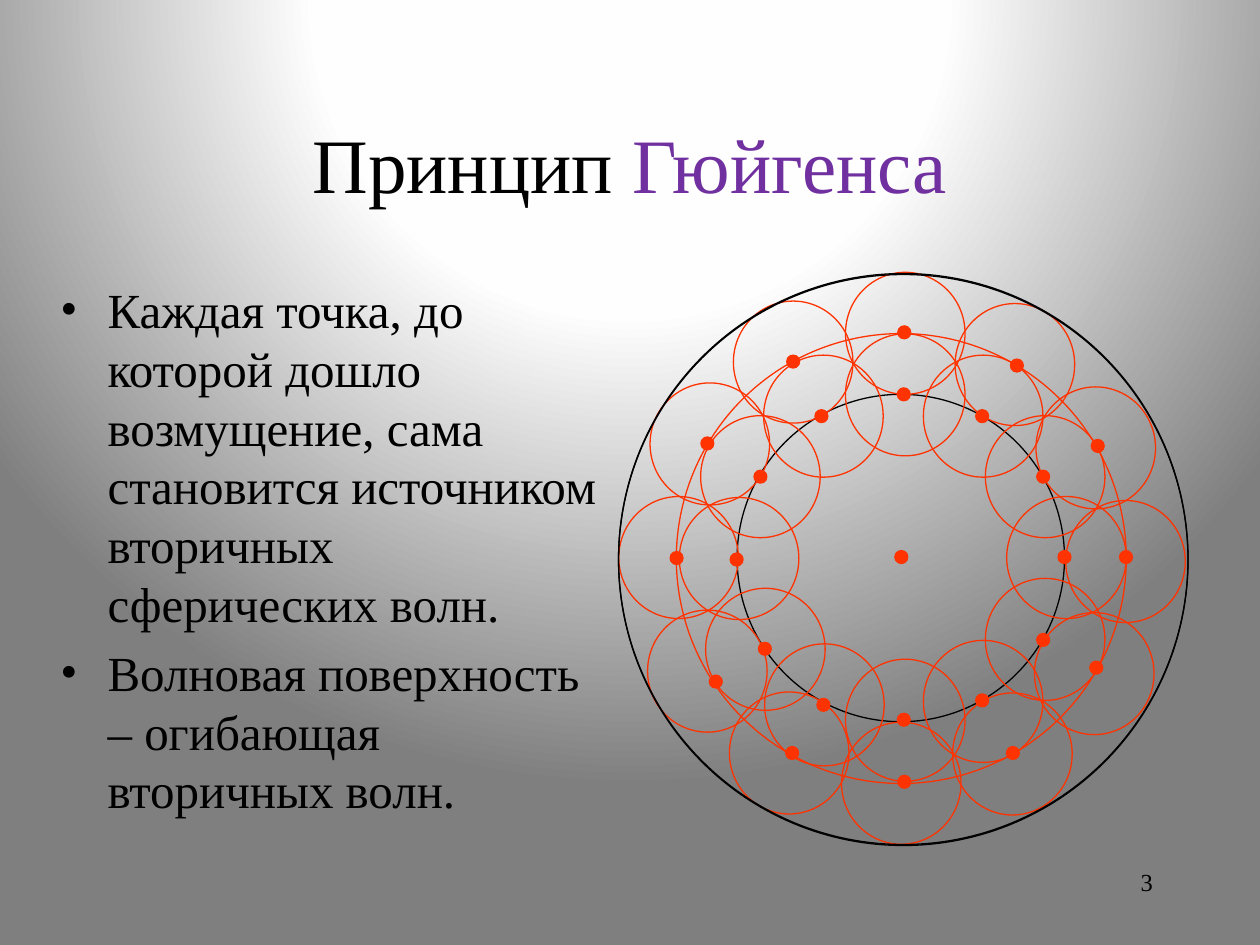
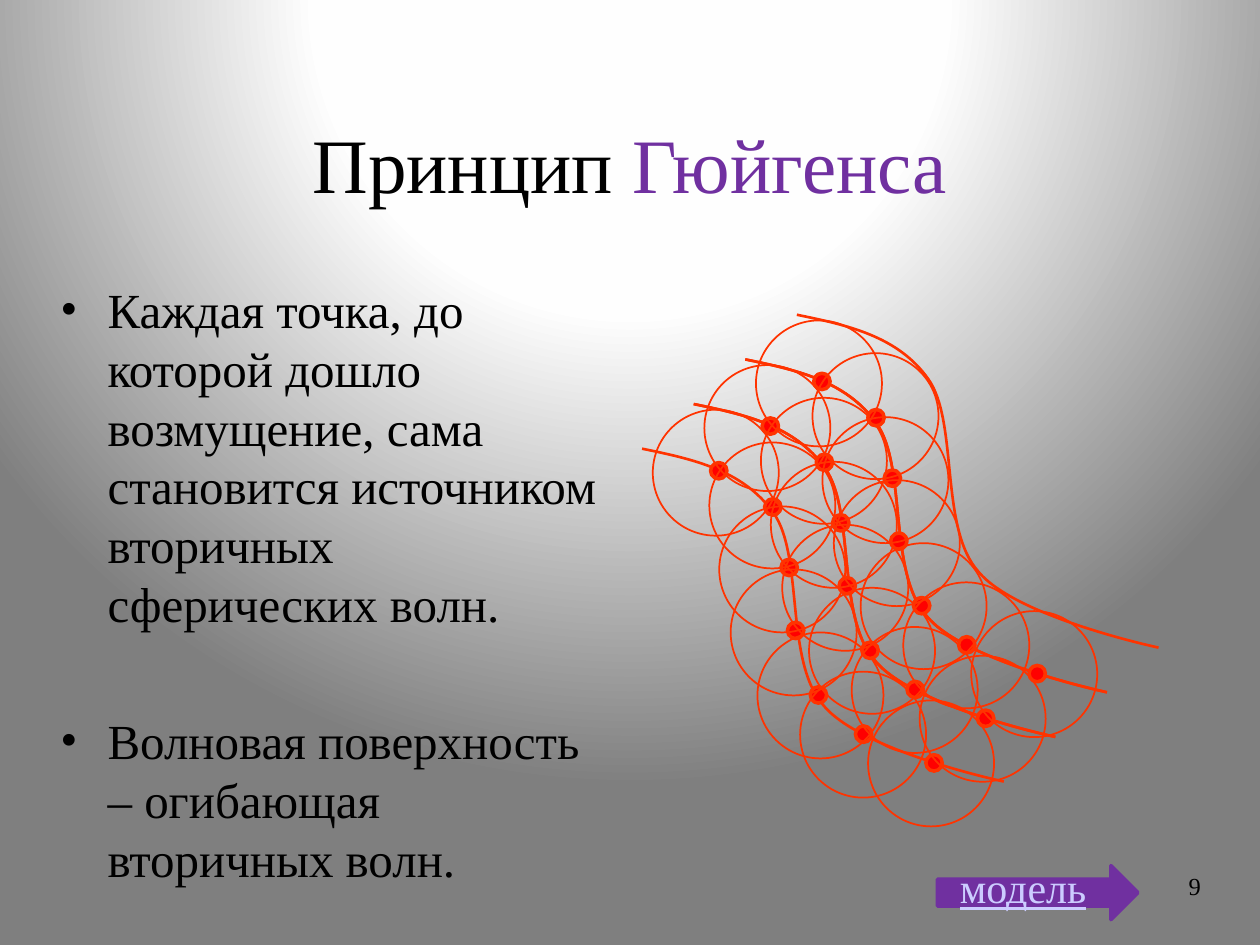
import math

import pptx
import pptx.dml.color
import pptx.enum.shapes
import pptx.enum.text
import pptx.oxml
import pptx.oxml.ns
import pptx.util

Cm = pptx.util.Cm
Pt = pptx.util.Pt
rgb = pptx.dml.color.RGBColor.from_string
qn = pptx.oxml.ns.qn
DRAWING = pptx.oxml.ns.nsdecls("a")
SHAPE = pptx.enum.shapes.MSO_SHAPE
ALIGN = pptx.enum.text.PP_ALIGN
ANCHOR = pptx.enum.text.MSO_ANCHOR

FONT = "Times New Roman"
BLACK, PURPLE, WAVE, SOURCE, PALE = "000000", "7030A0", "FF3300", "FF0000", "CCCCFF"


def add_ellipse(slide, center, size, line, weight, fill=None):
    """Draw an ellipse around its centre; all lengths in cm."""
    (x, y), (width, height) = center, size
    ellipse = slide.shapes.add_shape(SHAPE.OVAL, Cm(x - width / 2), Cm(y - height / 2),
                                     Cm(width), Cm(height))
    ellipse.shadow.inherit = False
    ellipse.line.color.rgb = rgb(line)
    ellipse.line.width = Pt(weight)
    if fill:
        ellipse.fill.solid()
        ellipse.fill.fore_color.rgb = rgb(fill)
    else:
        ellipse.fill.background()


def add_text(slide, box, paragraphs, size, align=ALIGN.LEFT, anchor=ANCHOR.TOP):
    """Add a text box; each paragraph is a list of (text, colour) runs."""
    textbox = slide.shapes.add_textbox(*(Cm(length) for length in box))
    frame = textbox.text_frame
    frame.word_wrap = True
    frame.vertical_anchor = anchor
    for number, runs in enumerate(paragraphs):
        paragraph = frame.add_paragraph() if number else frame.paragraphs[0]
        paragraph.alignment = align
        for text, color in runs:
            run = paragraph.add_run()
            run.text = text
            run.font.name = FONT
            run.font.size = Pt(size)
            run.font.color.rgb = rgb(color)
    return textbox


prs = pptx.Presentation()
prs.slide_width, prs.slide_height = Cm(25.4), Cm(19.05)

# Shared background: circular gradient on the master
prs.slide_master.background.fill.gradient()
plain_gradient = next(prs.slide_master.element.iter(qn("a:gradFill")))
stops = "".join(f'<a:gs pos="{position}"><a:srgbClr val="{color}"/></a:gs>'
                for position, color in ((0, "FFFFFF"), (40000, "FEFEFE"), (100000, "7F7F7F")))
glow = pptx.oxml.parse_xml(
    f'<a:gradFill {DRAWING} rotWithShape="1"><a:gsLst>{stops}</a:gsLst>'
    '<a:path path="circle"><a:fillToRect l="50000" t="-80000" r="50000" b="180000"/></a:path>'
    '</a:gradFill>')
plain_gradient.getparent().replace(plain_gradient, glow)

# Shared title, statements and slide number
statements = [
    [("Каждая точка, до которой дошло возмущение, сама становится источником "
      "вторичных сферических волн.", BLACK)],
    [("Волновая поверхность – огибающая вторичных волн.", BLACK)],
]
slides = []
for number, number_box, statement_gap in (("3", (18.21, 17.35, 5.28, 1.27), 5.6),
                                          ("9", (23.27, 17.43, 1.19, 1.02), 44.6)):
    slide = prs.slides.add_slide(prs.slide_layouts[6])
    slides.append(slide)
    add_text(slide, (1.9, 1.7, 21.6, 3.18), [[("Принцип ", BLACK), ("Гюйгенса", PURPLE)]],
             44, ALIGN.CENTER, ANCHOR.MIDDLE)
    body = add_text(slide, (0.97, 5.51, 11.66, 11.43), statements, 28)
    for paragraph, gap in zip(body.text_frame.paragraphs, (5.6, statement_gap)):
        paragraph.space_before = Pt(gap)
        properties = paragraph._p.get_or_add_pPr()
        properties.set("marL", str(Cm(0.95)))
        properties.set("indent", str(-Cm(0.95)))
        for bullet in (f'<a:buFont {DRAWING} typeface="{FONT}"/>',
                       f'<a:buChar {DRAWING} char="•"/>'):
            properties.append(pptx.oxml.parse_xml(bullet))
    add_text(slide, number_box, [[(number, BLACK)]], 14, ALIGN.RIGHT)

circular, curved = slides

# Circular wave: two wave fronts and the central source
add_ellipse(circular, (18.16, 11.25), (6.6, 6.6), BLACK, 0.75)
add_ellipse(circular, (18.17, 11.26), (9.07, 9.07), WAVE, 0.75)
add_ellipse(circular, (18.17, 11.23), (0.26, 0.26), WAVE, 0.75, WAVE)

# Secondary sources with the centres of their wavelets: inner front, then outer
source_wavelets = [
    ((21.46, 11.23), (21.5, 11.24)), ((18.22, 7.95), (18.25, 7.96)),
    ((14.85, 11.28), (14.9, 11.26)), ((18.22, 14.51), (18.25, 14.52)),
    ((19.8, 14.12), (19.82, 14.14)), ((21.03, 12.9), (21.07, 12.89)),
    ((19.8, 8.39), (19.82, 8.39)), ((21.03, 9.61), (21.07, 9.61)),
    ((16.56, 8.39), (16.6, 8.39)), ((15.33, 9.61), (15.33, 9.61)),
    ((15.42, 13.08), (15.43, 13.09)), ((16.6, 14.21), (16.62, 14.21)),
    ((22.7, 11.23), (22.69, 11.32)), ((13.64, 11.25), (13.68, 11.24)),
    ((18.23, 6.7), (18.25, 6.72)), ((20.5, 7.37), (20.46, 7.35)),
    ((22.13, 8.99), (22.09, 9.03)), ((18.23, 15.76), (18.17, 15.79)),
    ((20.42, 15.18), (20.41, 15.2)), ((22.1, 13.46), (22.06, 13.58)),
    ((15.99, 7.29), (15.99, 7.3)), ((14.26, 8.94), (14.31, 8.95)),
    ((14.43, 13.74), (14.26, 13.53)), ((15.97, 15.18), (15.91, 15.18)),
]
for source, wavelet in source_wavelets:
    add_ellipse(circular, source, (0.26, 0.26), WAVE, 0.75, WAVE)
    add_ellipse(circular, wavelet, (2.41, 2.46), WAVE, 0.75)

# Envelope of the secondary waves
for envelope_y in (11.29, 11.27):
    add_ellipse(circular, (18.21, envelope_y), (11.48, 11.51), BLACK, 0.75)

# Curved wave: start and Bezier points of the first front, its sources and wavelets
front_points = [(12.95, 9.04),
                (13.97, 9.25), (14.99, 9.47), (15.6, 10.34),
                (16.21, 11.2), (15.82, 13.34), (16.61, 14.22),
                (17.37, 15.14), (20.24, 15.75), (20.24, 15.75)]
front_x, front_y, front_tilt = 16.55, 12.51, 28
sources = [(14.49, 9.49), (15.58, 10.22), (15.91, 11.44), (16.04, 12.71),
           (16.5, 14.01), (17.41, 14.8), (18.83, 15.38)]
wavelets = [(14.43, 9.53), (15.57, 10.19), (15.77, 11.48), (16, 12.75),
            (16.54, 14.02), (17.4, 14.81), (18.77, 15.39)]
step_x, step_y = 1.04, -0.9

# Turn the front level, since the finished shape is rotated by the tilt
cos, sin = math.cos(math.radians(front_tilt)), math.sin(math.radians(front_tilt))
level_points = [(front_x + (x - front_x) * cos + (y - front_y) * sin,
                 front_y - (x - front_x) * sin + (y - front_y) * cos)
                for x, y in front_points]

# Each front sends out wavelets whose envelope is the next front
for step in range(3):
    for front, centers, diameter, weight, fill in (
            (step, sources, 0.33, 2, SOURCE),
            (None, wavelets[:1], 2.54, 1, None),
            (step + 1, wavelets[1:], 2.54, 1, None)):
        if front is not None:
            points = [(Cm(x + front * step_x), Cm(y + front * step_y)) for x, y in level_points]
            builder = curved.shapes.build_freeform(*points[0])
            builder.add_line_segments(points[1:], close=False)
            curve = builder.convert_to_shape()
            curve.rotation = front_tilt
            curve.shadow.inherit = False
            curve.fill.background()
            curve.line.color.rgb = rgb(WAVE)
            curve.line.width = Pt(1.5)
            # Every three straight segments become one Bezier segment
            segments = list(curve.element.iter(qn("a:lnTo")))
            for first in range(0, len(segments), 3):
                bezier = pptx.oxml.parse_xml(f"<a:cubicBezTo {DRAWING}/>")
                segments[first].addprevious(bezier)
                for segment in segments[first:first + 3]:
                    bezier.append(segment[0])
                    segment.getparent().remove(segment)
        for x, y in centers:
            add_ellipse(curved, (x + step * step_x, y + step * step_y),
                        (diameter, diameter), WAVE, weight, fill)

# Arrow to the model
arrow = curved.shapes.add_shape(SHAPE.RIGHT_ARROW, Cm(18.9), Cm(17.45), Cm(4.04), Cm(1.09))
arrow.shadow.inherit = False
arrow.fill.solid()
arrow.fill.fore_color.rgb = rgb(PURPLE)
arrow.line.color.rgb = rgb(PURPLE)
arrow.line.width = Pt(2)
model = add_text(curved, (19.1, 17.25, 3.86, 1.3), [[("модель", PALE)]], 24)
model.text_frame.paragraphs[0].runs[0].font.underline = True
curved.shapes.add_group_shape([arrow, model])

prs.save("out.pptx")
